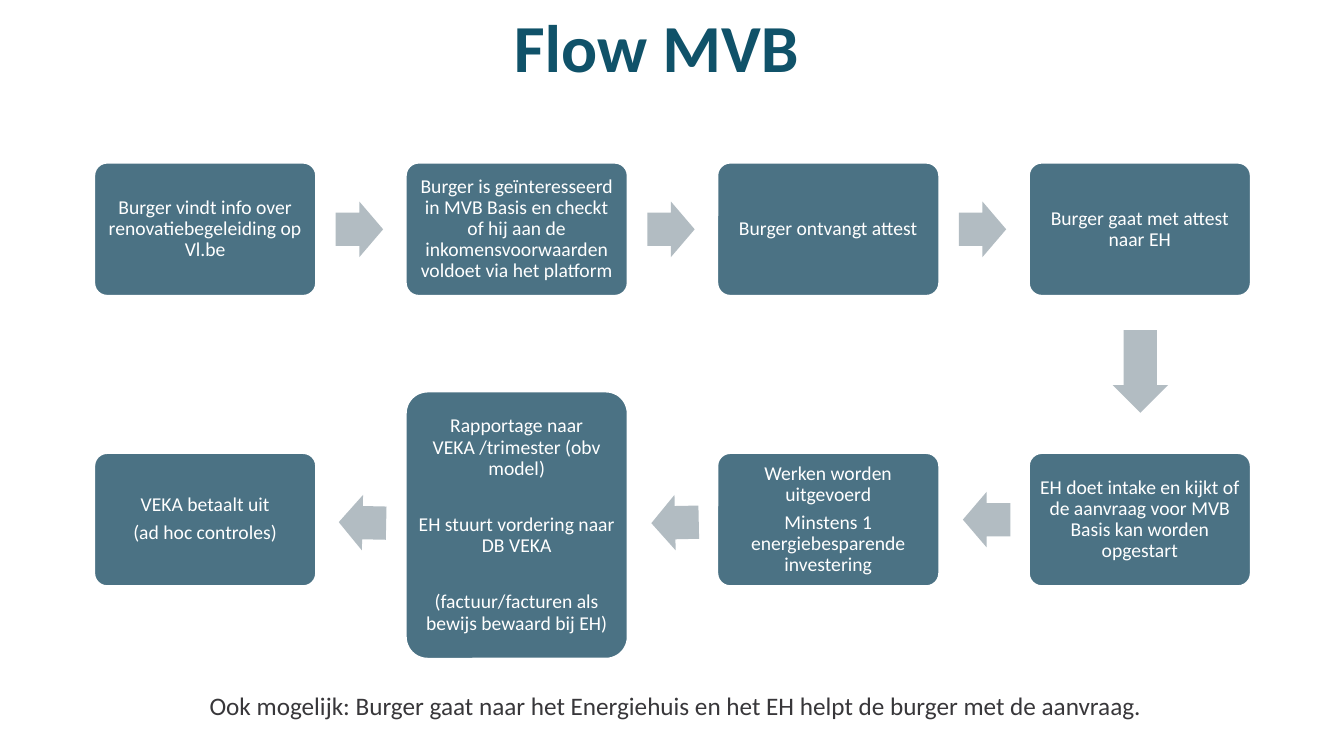
import pptx
import pptx.util
import pptx.dml.color
import pptx.enum.shapes
import pptx.enum.text

Inches = pptx.util.Inches
Pt = pptx.util.Pt
RGBColor = pptx.dml.color.RGBColor
SHAPES = pptx.enum.shapes.MSO_SHAPE
ANCHOR = pptx.enum.text.MSO_ANCHOR
ALIGN = pptx.enum.text.PP_ALIGN

TITLE_BLUE = RGBColor(0x10, 0x52, 0x69)
STEP_BLUE = RGBColor(0x4B, 0x72, 0x84)
ARROW_GREY = RGBColor(0xB2, 0xBC, 0xC2)
NOTE_GREY = RGBColor(0x38, 0x37, 0x3A)
WHITE = RGBColor(0xFF, 0xFF, 0xFF)

STEP_LEFT = 0.93
STEP_PITCH = 3.09
STEP_WIDTH = 2.21
STEP_HEIGHT = 1.33
TOP_ROW = 1.61
BOTTOM_ROW = 4.49
ARROW_HEIGHT = 0.55

TOP_STEPS = [
    "Burger vindt info over renovatiebegeleiding op Vl.be",
    "Burger is geïnteresseerd in MVB Basis en checkt of hij aan de "
    "inkomensvoorwaarden voldoet via het platform",
    "Burger ontvangt attest",
    "Burger gaat met attest naar EH",
]
BOTTOM_STEPS = [
    (0, ["VEKA betaalt uit", "(ad hoc controles)"]),
    (2, ["Werken worden uitgevoerd",
         "Minstens 1 energiebesparende investering"]),
    (3, ["EH doet intake en kijkt of de aanvraag voor MVB Basis kan worden opgestart"]),
]
REPORT_STEP = [
    "Rapportage naar VEKA /trimester (obv model)",
    "EH stuurt vordering naar DB VEKA",
    "(factuur/facturen als bewijs bewaard bij EH)",
]
BACK_ARROWS = [(9.55, 4.88, 180), (6.46, 4.91, 178.8), (3.36, 4.91, 181.2)]


def add_span(para, text, size, color, bold=False):
    span = para.add_run()
    span.text = text
    span.font.name = "Calibri"
    span.font.size = Pt(size)
    span.font.bold = bold
    span.font.color.rgb = color


def add_text(page, left, top, width, height, text, size, color, bold=False):
    box = page.shapes.add_textbox(Inches(left), Inches(top), Inches(width), Inches(height))
    box.text_frame.word_wrap = True
    para = box.text_frame.paragraphs[0]
    add_span(para, text, size, color, bold)
    return para


def add_step(page, left, top, height, texts, gap=4.9):
    step = page.shapes.add_shape(SHAPES.ROUNDED_RECTANGLE, Inches(left), Inches(top),
                                 Inches(STEP_WIDTH), Inches(height))
    step.shadow.inherit = False
    step.adjustments[0] = 0.1
    step.fill.solid()
    step.fill.fore_color.rgb = STEP_BLUE
    step.line.color.rgb = WHITE
    step.line.width = Pt(2)
    frame = step.text_frame
    frame.word_wrap = True
    frame.vertical_anchor = ANCHOR.MIDDLE
    frame.margin_left = frame.margin_right = Inches(0.06)
    frame.margin_top = frame.margin_bottom = Inches(0.06)
    for index, text in enumerate(texts):
        para = frame.add_paragraph() if index else frame.paragraphs[0]
        para.alignment = ALIGN.CENTER
        para.line_spacing = 0.9
        para.space_before = Pt(gap if index else 0)
        add_span(para, text, 14, WHITE)


def add_arrow(page, left, top, width=0.47, rotation=0):
    arrow = page.shapes.add_shape(SHAPES.RIGHT_ARROW, Inches(left), Inches(top),
                                  Inches(width), Inches(ARROW_HEIGHT))
    arrow.shadow.inherit = False
    arrow.adjustments[0] = 0.6
    arrow.adjustments[1] = 0.5
    arrow.rotation = rotation
    arrow.fill.solid()
    arrow.fill.fore_color.rgb = ARROW_GREY
    arrow.line.fill.background()


def step_left(column):
    return STEP_LEFT + column * STEP_PITCH


def main():
    deck = pptx.Presentation()
    deck.slide_width = Inches(13.33)
    deck.slide_height = Inches(7.5)
    page = deck.slides.add_slide(deck.slide_layouts[6])

    title = add_text(page, 0.76, 0.28, 11.5, 1.02, "Flow MVB", 48, TITLE_BLUE, True)
    title.alignment = ALIGN.CENTER
    title.line_spacing = Pt(38)

    for column, text in enumerate(TOP_STEPS):
        add_step(page, step_left(column), TOP_ROW, STEP_HEIGHT, [text])
    for column in range(len(TOP_STEPS) - 1):
        add_arrow(page, step_left(column) + 2.4, 2)
    add_arrow(page, 10.9, 3.41, 0.82, 90)

    for column, texts in BOTTOM_STEPS:
        add_step(page, step_left(column), BOTTOM_ROW, STEP_HEIGHT, texts)
    add_step(page, step_left(1), 3.88, 2.66, REPORT_STEP, 25)
    for left, top, rotation in BACK_ARROWS:
        add_arrow(page, left, top, rotation=rotation)

    add_text(page, 1.98, 6.8, 10.28, 0.4,
             "Ook mogelijk: Burger gaat naar het Energiehuis en het EH helpt de burger "
             "met de aanvraag.", 18, NOTE_GREY)
    deck.save("out.pptx")


if __name__ == "__main__":
    main()
